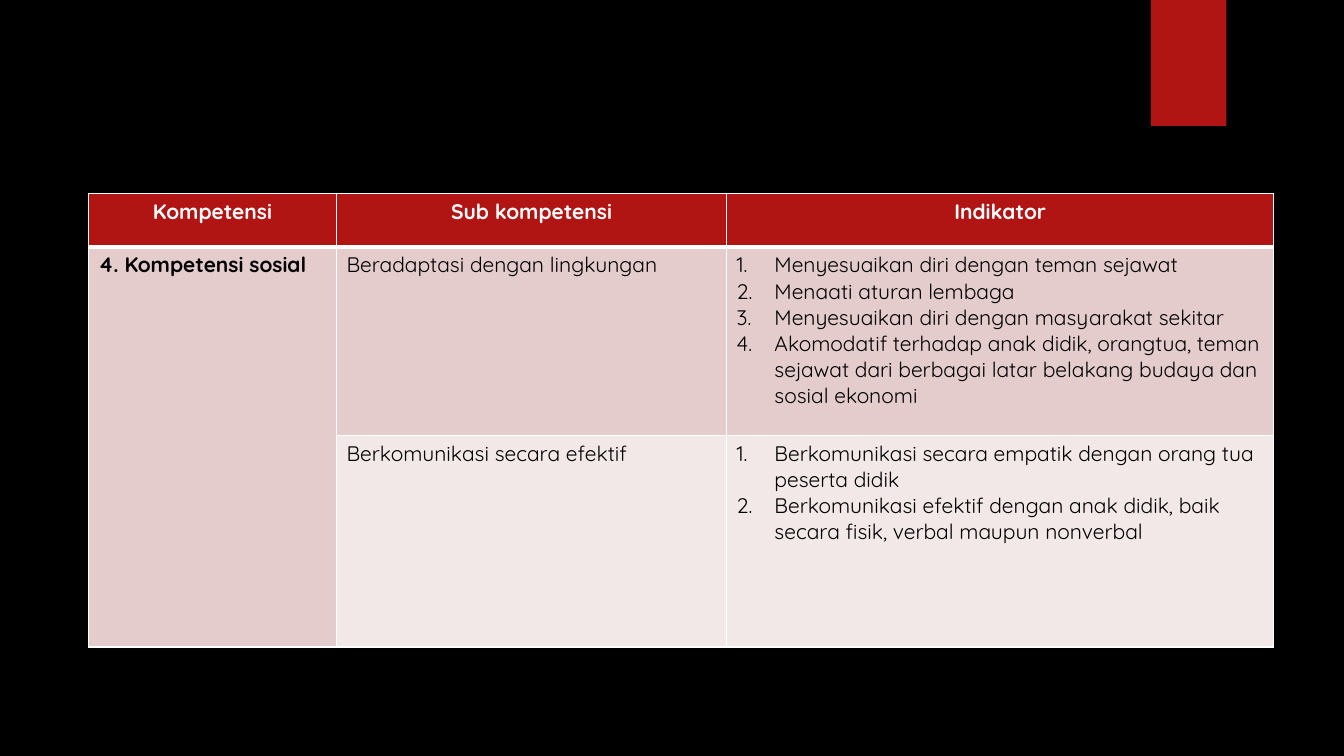
from dataclasses import dataclass
from lxml.etree import SubElement
from pptx import Presentation
from pptx.dml.color import RGBColor as Rgb
from pptx.enum.shapes import MSO_SHAPE as Shape
from pptx.enum.text import PP_ALIGN as Align
from pptx.oxml import parse_xml
from pptx.oxml.ns import nsdecls, qn
from pptx.util import Pt


@dataclass(frozen=True)
class Theme:
    black: str = "000000"
    white: str = "FFFFFF"
    red: str = "B01513"
    rose: str = "E4CCCC"
    pale: str = "F2E8E7"
    font: str = "Quicksand"
    size: int = 15
    thin: int = 1
    thick: int = 3


LOOK = Theme()
HEADS = ["Kompetensi", "Sub kompetensi", "Indikator"]
TOPIC = "4. Kompetensi sosial"
ROWS = [
    ("Beradaptasi dengan lingkungan", LOOK.rose, [
        "Menyesuaikan diri dengan teman sejawat",
        "Menaati aturan lembaga",
        "Menyesuaikan diri dengan masyarakat sekitar",
        "Akomodatif terhadap anak didik, orangtua, teman sejawat "
        "dari berbagai latar belakang budaya dan sosial ekonomi",
    ]),
    ("Berkomunikasi secara efektif", LOOK.pale, [
        "Berkomunikasi secara empatik dengan orang tua peserta didik",
        "Berkomunikasi efektif dengan anak didik, baik secara fisik, "
        "verbal maupun nonverbal",
    ]),
]
WIDTHS = [177.2, 278.6, 390.9]
HEIGHTS = [38.2, 134.6, 151.2]


def paint(fill, color):
    fill.solid()
    fill.fore_color.rgb = Rgb.from_string(color)


def add_tab(slide):
    tab = slide.shapes.add_shape(Shape.RECTANGLE, Pt(822), Pt(0), Pt(54), Pt(90))
    tab.shadow.inherit = False
    paint(tab.fill, LOOK.red)
    tab.line.fill.background()


def number(para):
    props = para._p.get_or_add_pPr()
    props.set("marL", str(Pt(27)))
    props.set("indent", str(Pt(-27)))
    SubElement(props, qn("a:buFont"), typeface="+mj-lt")
    SubElement(props, qn("a:buAutoNum"), type="arabicPeriod")


def write(cell, lines, color=LOOK.black, bold=False, align=Align.LEFT, listed=False):
    frame = cell.text_frame
    for i, line in enumerate(lines):
        para = frame.add_paragraph() if i else frame.paragraphs[0]
        para.alignment = align
        if listed:
            number(para)
        run = para.add_run()
        run.text = line
        font = run.font
        font.name, font.size, font.bold = LOOK.font, Pt(LOOK.size), bold
        font.color.rgb = Rgb.from_string(color)


def border(cell, top, base):
    props = cell._tc.get_or_add_tcPr()
    sides = {"L": LOOK.thin, "R": LOOK.thin, "T": top, "B": base}
    for i, (side, width) in enumerate(sides.items()):
        props.insert(i, parse_xml(
            f'<a:ln{side} {nsdecls("a")} w="{Pt(width)}"><a:solidFill>'
            f'<a:srgbClr val="{LOOK.white}"/></a:solidFill></a:ln{side}>'))


def add_grid(slide):
    frame = slide.shapes.add_table(
        len(HEIGHTS), len(WIDTHS), Pt(63.2), Pt(138.2),
        Pt(sum(WIDTHS)), Pt(sum(HEIGHTS)))
    grid = frame.table
    for col, width in zip(grid.columns, WIDTHS):
        col.width = Pt(width)
    for row, height in zip(grid.rows, HEIGHTS):
        row.height = Pt(height)

    # Cell fills and borders
    fills = [LOOK.red] + [fill for _, fill, _ in ROWS]
    for r, fill in enumerate(fills):
        for c in range(len(WIDTHS)):
            cell = grid.cell(r, c)
            paint(cell.fill, LOOK.rose if r and c == 0 else fill)
            border(cell, LOOK.thick if r == 1 else LOOK.thin,
                   LOOK.thick if r == 0 else LOOK.thin)

    # Header row
    for c, head in enumerate(HEADS):
        write(grid.cell(0, c), [head], LOOK.white, True, Align.CENTER)

    # Body rows
    grid.cell(1, 0).merge(grid.cell(2, 0))
    write(grid.cell(1, 0), [TOPIC], bold=True)
    for r, (skill, _, signs) in enumerate(ROWS, 1):
        write(grid.cell(r, 1), [skill])
        write(grid.cell(r, 2), signs, listed=True)


def main():
    deck = Presentation()
    deck.slide_width, deck.slide_height = Pt(960), Pt(540)
    slide = deck.slides.add_slide(deck.slide_layouts[6])
    paint(slide.background.fill, LOOK.black)
    add_tab(slide)
    add_grid(slide)
    deck.save("out.pptx")


if __name__ == "__main__":
    main()
